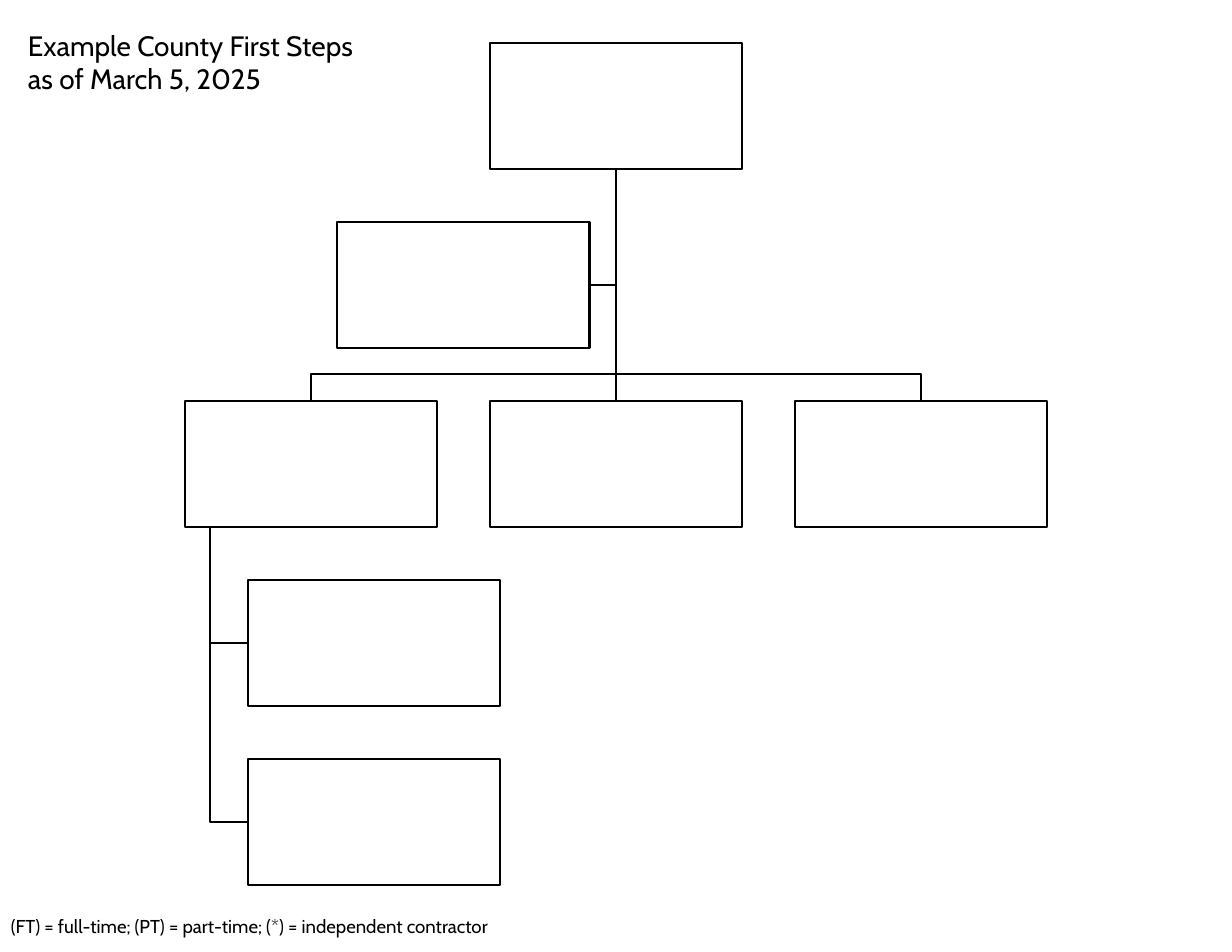
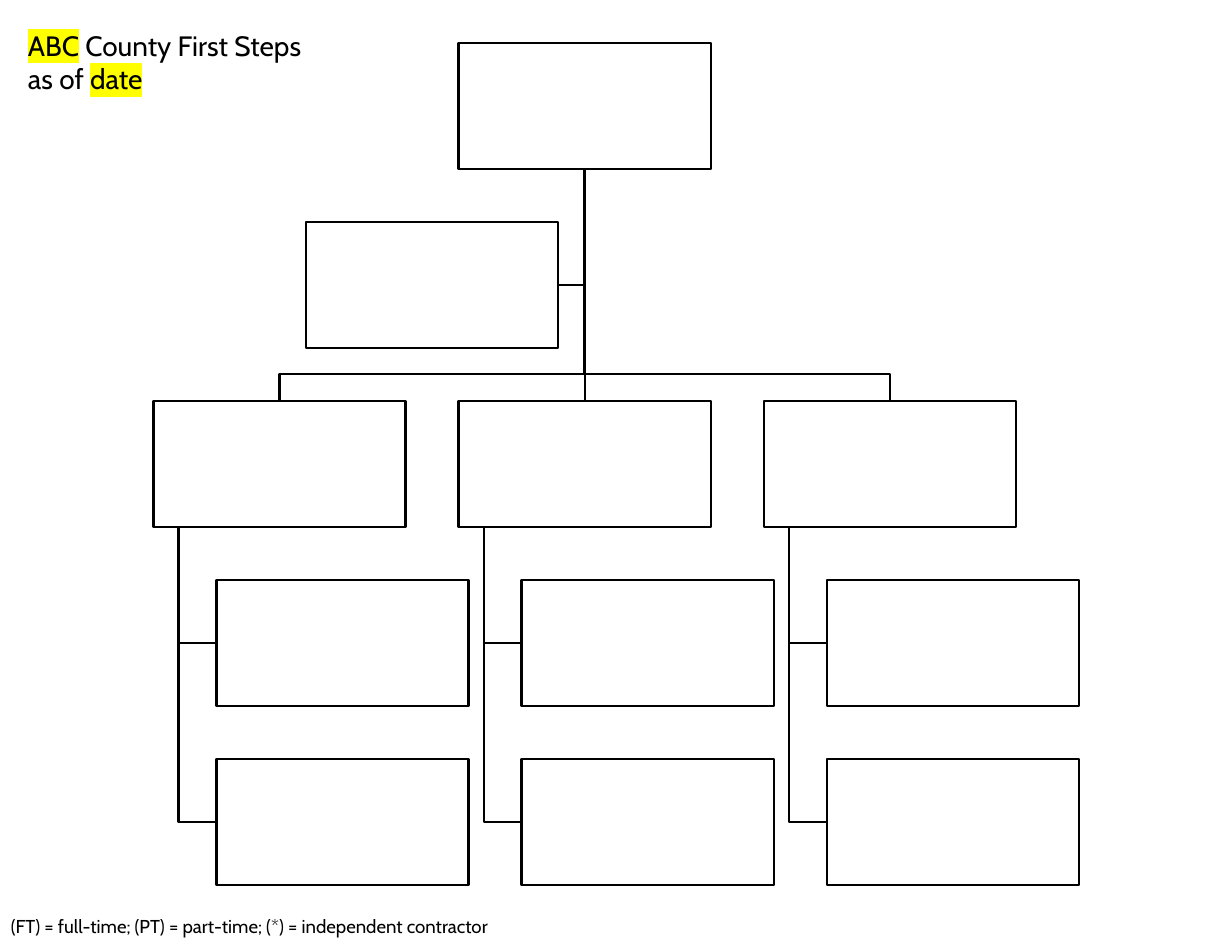
from lxml import etree
from pptx import Presentation
from pptx.dml.color import RGBColor
from pptx.enum.shapes import MSO_CONNECTOR as Connector, MSO_SHAPE as Shape
from pptx.enum.text import MSO_ANCHOR as Anchor, MSO_AUTO_SIZE as AutoSize, PP_ALIGN as Align
from pptx.oxml.ns import qn
from pptx.util import Cm, Pt

# Shared style
FONT = "Cabin"
BLACK, WHITE, YELLOW = "000000", "FFFFFF", "FFFF00"
LINE_WIDTH = Pt(1.5)
LEGEND = "(FT) = full-time; (PT) = part-time; (*) = independent contractor"

# Chart grid, in centimetres
BOX_WIDTH, BOX_HEIGHT = 5.72, 2.86
FIRST_TOP, ROW_PITCH, COLUMN_PITCH = 0.97, 4.06, 6.92
ASSISTANT_GAP = 0.6
TRUNK_INDENT, STAFF_INDENT = 0.57, 1.43
BRANCH_RISE = 0.61


def color(hex_string):
    return RGBColor.from_string(hex_string)


def row_top(row):
    return FIRST_TOP + row * ROW_PITCH


def row_middle(row):
    return row_top(row) + BOX_HEIGHT / 2


def style_line(shape):
    shape.line.color.rgb = color(BLACK)
    shape.line.width = LINE_WIDTH


def add_box(slide, left, row):
    box = slide.shapes.add_shape(
        Shape.RECTANGLE, Cm(left), Cm(row_top(row)), Cm(BOX_WIDTH), Cm(BOX_HEIGHT))
    box.shadow.inherit = False
    box.fill.solid()
    box.fill.fore_color.rgb = color(WHITE)
    style_line(box)
    return box


def add_elbow(slide, *points):
    """Draw an open line with square corners through points given in cm."""
    start, *others = [(Cm(x), Cm(y)) for x, y in points]
    builder = slide.shapes.build_freeform(*start)
    builder.add_line_segments(others, close=False)
    elbow = builder.convert_to_shape()
    elbow.shadow.inherit = False
    elbow.fill.background()
    style_line(elbow)


def join_boxes(slide, upper, lower):
    connector = slide.shapes.add_connector(Connector.STRAIGHT, 0, 0, 0, 0)
    connector.begin_connect(upper, 2)
    connector.end_connect(lower, 0)
    style_line(connector)
    etree.SubElement(connector._element.spPr, qn("a:effectLst"))


def style_paragraph(paragraph, size):
    paragraph.alignment = Align.LEFT
    paragraph.font.name = FONT
    paragraph.font.size = Pt(size)
    paragraph.font.color.rgb = color(BLACK)


def highlight(run):
    mark = etree.SubElement(run._r.get_or_add_rPr(), qn("a:highlight"))
    etree.SubElement(mark, qn("a:srgbClr"), val=YELLOW)


def add_title(slide, lines):
    """Fill the title; each line is a list of (text, highlighted) pairs."""
    title = slide.shapes.title
    title.left, title.top, title.width, title.height = Cm(0.38), Cm(0.51), Cm(8.08), Cm(1.8)
    frame = title.text_frame
    frame.vertical_anchor = Anchor.TOP
    frame.auto_size = AutoSize.NONE
    paragraph = frame.paragraphs[0]
    style_paragraph(paragraph, 18)
    for index, line in enumerate(lines):
        if index:
            paragraph.add_line_break()
        for text, highlighted in line:
            run = paragraph.add_run()
            run.text = text
            if highlighted:
                highlight(run)


def add_legend(slide):
    legend = slide.shapes.add_textbox(0, Cm(20.62), Cm(13.97), Cm(0.76))
    legend.text_frame.word_wrap = True
    legend.text_frame.text = LEGEND
    style_paragraph(legend.text_frame.paragraphs[0], 12)


def add_staff(slide, manager_left):
    trunk = manager_left + TRUNK_INDENT
    staff_left = manager_left + STAFF_INDENT
    for row in (3, 4):
        add_elbow(slide, (trunk, row_top(2) + BOX_HEIGHT),
                  (trunk, row_middle(row)), (staff_left, row_middle(row)))
        add_box(slide, staff_left, row)


def add_organization(slide, center, staffed_columns):
    """Draw the director, an assistant, three managers and their staff."""
    left = center - BOX_WIDTH / 2
    director_bottom = row_top(0) + BOX_HEIGHT
    branch = row_top(2) - BRANCH_RISE
    assistant_right = center - ASSISTANT_GAP

    # Lines from the director
    add_elbow(slide, (center, director_bottom), (center, row_middle(1)),
              (assistant_right, row_middle(1)))
    for side in (-1, 1):
        manager_center = center + side * COLUMN_PITCH
        add_elbow(slide, (center, director_bottom), (center, branch),
                  (manager_center, branch), (manager_center, row_top(2)))

    # Boxes
    director = add_box(slide, left, 0)
    add_box(slide, assistant_right - BOX_WIDTH, 1)
    managers = [add_box(slide, left + column * COLUMN_PITCH, 2) for column in (-1, 0, 1)]
    join_boxes(slide, director, managers[1])
    for column in staffed_columns:
        add_staff(slide, left + column * COLUMN_PITCH)


def add_chart_slide(presentation, title_lines, center, staffed_columns):
    slide = presentation.slides.add_slide(presentation.slide_layouts[5])
    add_organization(slide, center, staffed_columns)
    add_title(slide, title_lines)
    add_legend(slide)


def main():
    presentation = Presentation()
    presentation.slide_width, presentation.slide_height = Cm(27.94), Cm(21.59)

    # Example chart
    add_chart_slide(
        presentation,
        [[("Example County First Steps", False)], [("as of March 5, 2025", False)]],
        center=13.97, staffed_columns=[-1])

    # Blank chart to fill in
    add_chart_slide(
        presentation,
        [[("ABC", True), (" County First Steps", False)],
         [("as of ", False), ("date", True)]],
        center=13.26, staffed_columns=[-1, 0, 1])

    presentation.save("out.pptx")


if __name__ == "__main__":
    main()
